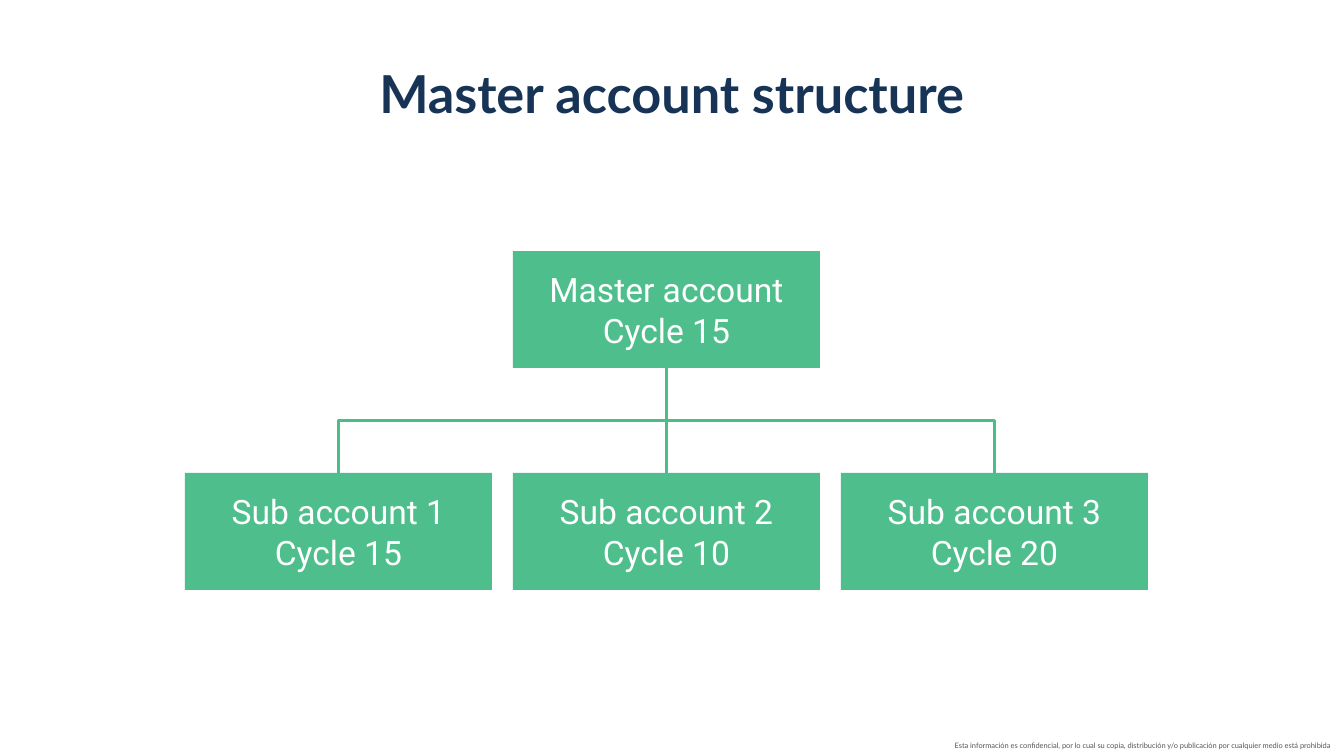
from lxml import etree
from pptx import Presentation
from pptx.dml.color import RGBColor
from pptx.enum import shapes, text
from pptx.oxml.ns import qn
from pptx.util import Pt

SCALE = 914400 / 134.4
WIDE, TALL = 307, 117


def px(n):
    return round(n * SCALE)


def tint(code):
    return RGBColor.from_string(code)


class Deck:
    navy, grey, white = "173456", "57565A", "FFFFFF"
    green, edge = "4EBF8C", "4ABE89"
    head, body = "Lato", "Roboto"

    def __init__(self):
        self.file = Presentation()
        self.file.slide_width, self.file.slide_height = px(1344), px(756)
        self.slide = self.file.slides.add_slide(self.file.slide_layouts[5])

    def label(self, shape, lines, size, face, color, align, bold=False):
        frame = shape.text_frame
        frame.word_wrap = True
        frame.auto_size = text.MSO_AUTO_SIZE.NONE
        frame.vertical_anchor = text.MSO_ANCHOR.MIDDLE
        for i, line in enumerate(lines):
            para = frame.add_paragraph() if i else frame.paragraphs[0]
            para.alignment = align
            run = para.add_run()
            run.text = line
            font = run.font
            font.size, font.name, font.bold = Pt(size), face, bold
            font.color.rgb = tint(color)

    def title(self, words, x, y, w, h):
        shape = self.slide.shapes.title
        shape.left, shape.top, shape.width, shape.height = map(px, (x, y, w, h))
        self.label(shape, [words], 28, self.head, self.navy,
                   text.PP_ALIGN.CENTER, True)

    def note(self, words, x, y, w, h):
        shape = self.slide.shapes.add_textbox(*map(px, (x, y, w, h)))
        self.label(shape, [words], 4, self.head, self.grey, text.PP_ALIGN.RIGHT)

    def box(self, lines, x, y):
        shape = self.slide.shapes.add_shape(
            shapes.MSO_SHAPE.RECTANGLE, *map(px, (x, y, WIDE, TALL)))
        shape.shadow.inherit = False
        shape.fill.solid()
        shape.fill.fore_color.rgb = tint(self.green)
        shape.line.fill.background()
        self.label(shape, lines, 18, self.body, self.white, text.PP_ALIGN.CENTER)
        return shape

    def link(self, top, low):
        x = top.left + top.width // 2
        y = top.top + top.height
        dx, dy = low.left - top.left, low.top - y
        if dx:
            mid_x, mid_y = x + dx // 2, y + dy // 2
            kind = shapes.MSO_CONNECTOR.ELBOW
            ends = (mid_x - dy // 2, mid_y + dx // 2,
                    mid_x + dy // 2, mid_y - dx // 2)
        else:
            kind = shapes.MSO_CONNECTOR.STRAIGHT
            ends = (x, y, x, low.top)
        line = self.slide.shapes.add_connector(kind, *ends)
        line.line.color.rgb = tint(self.edge)
        line.line.width = Pt(1.5)
        props = line._element.spPr
        if dx:
            turn = 90 if dx < 0 else 270
            props.find(qn("a:xfrm")).set("rot", str(turn * 60000))
        etree.SubElement(props, qn("a:effectLst"))


def main():
    deck = Deck()
    deck.note("Esta información es confidencial, por lo cual su copia, "
              "distribución y/o publicación por cualquier medio está prohibida",
              809, 734, 535, 23)
    deck.title("Master account structure", 301, 50, 741, 85)
    left, step = 185, 328
    top = deck.box(["Master account", "Cycle 15"], left + step, 251)
    for i, cycle in enumerate((15, 10, 20)):
        low = deck.box([f"Sub account {i + 1} Cycle {cycle}"],
                       left + i * step, 473)
        deck.link(top, low)
    deck.file.save("out.pptx")


if __name__ == "__main__":
    main()
